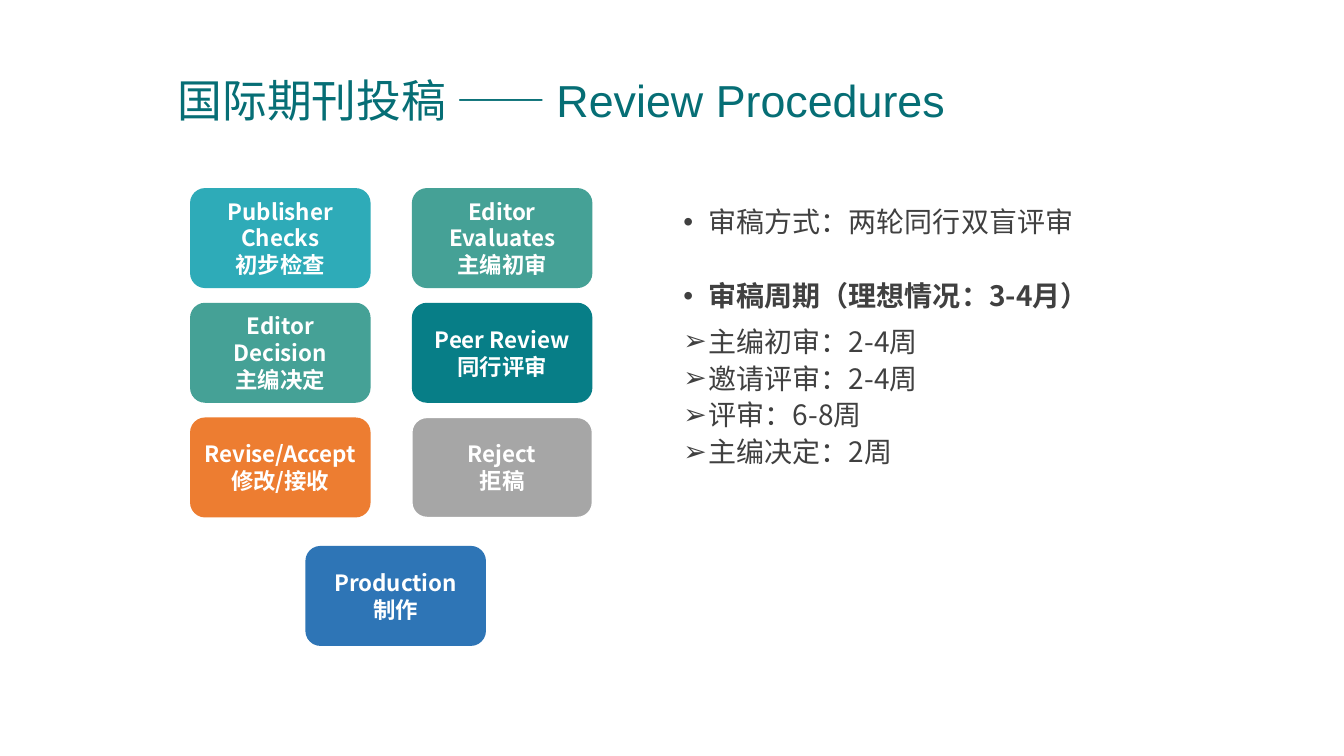
from lxml.etree import SubElement
from pptx import Presentation
from pptx.dml.color import RGBColor
from pptx.enum.shapes import MSO_SHAPE
from pptx.enum.text import MSO_ANCHOR, MSO_AUTO_SIZE, PP_ALIGN
from pptx.oxml.ns import qn
from pptx.util import Cm, Pt

TEAL_TITLE = RGBColor(0x06, 0x6E, 0x75)
DARK_GREY = RGBColor(0x40, 0x40, 0x40)
WHITE = RGBColor(0xFF, 0xFF, 0xFF)
CYAN = RGBColor(0x2E, 0xAB, 0xB8)
GREEN = RGBColor(0x45, 0xA1, 0x96)
TEAL = RGBColor(0x07, 0x7E, 0x87)
ORANGE = RGBColor(0xED, 0x7D, 0x31)
GREY = RGBColor(0xA6, 0xA6, 0xA6)
BLUE = RGBColor(0x2E, 0x75, 0xB6)
CJK_FONT = "Noto Sans CJK SC"


def add_run(paragraph, text, size, color, bold=False, latin=CJK_FONT):
    """Add a run with its Latin and East Asian fonts."""
    run = paragraph.add_run()
    run.text = text
    run.font.size = Pt(size)
    run.font.bold = bold
    run.font.color.rgb = color
    run.font.name = latin
    SubElement(run.font._element, qn("a:ea"), typeface=CJK_FONT)


def place(shape, left, top, width, height):
    shape.left, shape.top = Cm(left), Cm(top)
    shape.width, shape.height = Cm(width), Cm(height)


presentation = Presentation()
presentation.slide_width = Cm(33.87)
presentation.slide_height = Cm(19.05)
slide = presentation.slides.add_slide(presentation.slide_layouts[1])

# Title
title = slide.shapes.title
place(title, 4.22, 1.55, 29.2, 2.08)
title.text_frame.auto_size = MSO_AUTO_SIZE.NONE
title.text_frame.vertical_anchor = MSO_ANCHOR.MIDDLE
paragraph = title.text_frame.paragraphs[0]
paragraph.alignment = PP_ALIGN.LEFT
paragraph.line_spacing = 0.9
add_run(paragraph, "国际期刊投稿 —— Review Procedures", 32, TEAL_TITLE, latin="Arial")

# Review list: text, bullet, bold, space after
review_items = [
    ("审稿方式：两轮同行双盲评审", "•", False, 26.4),
    ("审稿周期（理想情况：3-4月）", "•", True, 6),
    ("主编初审：2-4周", "➢", False, 0),
    ("邀请评审：2-4周", "➢", False, 0),
    ("评审：6-8周", "➢", False, 0),
    ("主编决定：2周", "➢", False, 0),
]
body = slide.placeholders[1]
place(body, 16.97, 4.95, 13.49, 12.34)
frame = body.text_frame
frame.auto_size = MSO_AUTO_SIZE.NONE
for index, (text, bullet, bold, space_after) in enumerate(review_items):
    paragraph = frame.add_paragraph() if index else frame.paragraphs[0]
    paragraph.line_spacing = 1.1
    paragraph.space_before = Pt(0)
    paragraph.space_after = Pt(space_after)
    properties = paragraph._p.get_or_add_pPr()
    properties.set("marL", str(Cm(0.635)))
    properties.set("indent", str(-Cm(0.635)))
    SubElement(properties, qn("a:buFont"), typeface="Arial")
    SubElement(properties, qn("a:buChar"), char=bullet)
    add_run(paragraph, text, 20, DARK_GREY, bold)

# Procedure steps: column, row, English, Chinese, fill
GRID_LEFT, GRID_TOP = 4.79, 4.74
COLUMN_PITCH, ROW_PITCH = 5.59, 2.89
STEP_WIDTH, STEP_HEIGHT = 4.55, 2.52
steps = [
    (0, 0, "Publisher Checks", "初步检查", CYAN),
    (1, 0, "Editor Evaluates", "主编初审", GREEN),
    (0, 1, "Editor Decision", "主编决定", GREEN),
    (1, 1, "Peer Review", "同行评审", TEAL),
    (0, 2, "Revise/Accept", "修改/接收", ORANGE),
    (1, 2, "Reject", "拒稿", GREY),
    (0.52, 3.12, "Production", "制作", BLUE),
]
for column, row, english, chinese, fill in steps:
    step = slide.shapes.add_shape(
        MSO_SHAPE.ROUNDED_RECTANGLE,
        Cm(GRID_LEFT + column * COLUMN_PITCH), Cm(GRID_TOP + row * ROW_PITCH),
        Cm(STEP_WIDTH), Cm(STEP_HEIGHT))
    step.adjustments[0] = 0.15
    step.shadow.inherit = False
    step.fill.solid()
    step.fill.fore_color.rgb = fill
    if fill == GREY:
        step.line.color.rgb = WHITE
        step.line.width = Pt(1)
    else:
        step.line.fill.background()
    frame = step.text_frame
    frame.word_wrap = True
    frame.vertical_anchor = MSO_ANCHOR.MIDDLE
    frame.margin_left = frame.margin_right = Cm(0.12)
    frame.margin_top = frame.margin_bottom = Cm(0.12)
    for paragraph, text in zip((frame.paragraphs[0], frame.add_paragraph()), (english, chinese)):
        paragraph.alignment = PP_ALIGN.CENTER
        add_run(paragraph, text, 16, WHITE, bold=True)

presentation.save("out.pptx")
